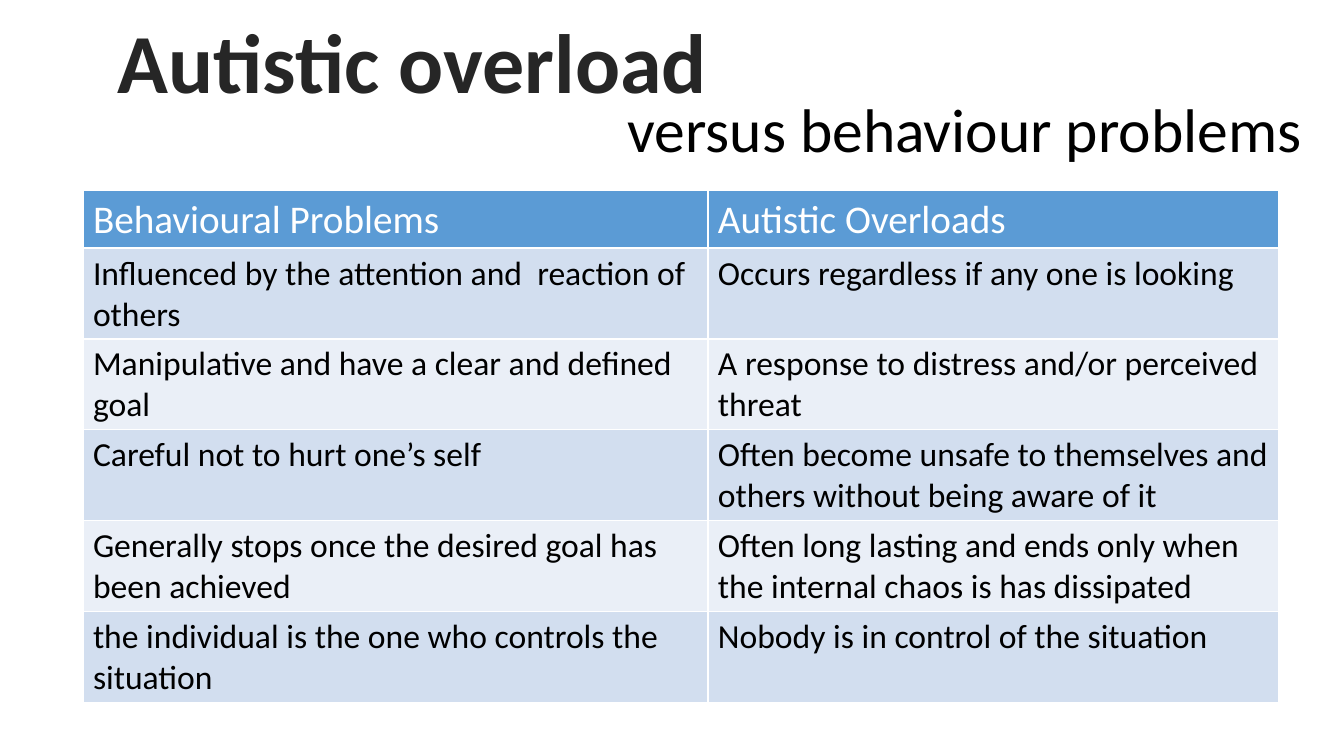
from dataclasses import dataclass

from lxml.etree import SubElement
from pptx import Presentation
from pptx.dml.color import RGBColor
from pptx.enum.text import MSO_ANCHOR as Anchor, MSO_AUTO_SIZE as AutoSize, PP_ALIGN as Align
from pptx.oxml.ns import qn
from pptx.util import Cm, Pt

TITLE_ONLY = 5
HEADER_FILL = "5B9BD5"
BAND_FILLS = ("D2DEEF", "EAEFF7")
COLUMN_WIDTHS = (15.75, 14.37)
HEADER_HEIGHT = 1.43
ROW_HEIGHT = 2.29


@dataclass
class TextStyle:
    size: int
    colour: str
    bold: bool = False


@dataclass
class Heading:
    text: str
    left: float
    top: float
    width: float
    height: float
    wrap: bool
    style: TextStyle


TITLE = Heading("Autistic overload", 1.35, 0.1, 18.08, 2.82, True,
                TextStyle(60, "262626", True))
SUBTITLE = Heading("versus behaviour problems", 15.47, 2.16, 17.7, 2.13, False,
                   TextStyle(44, "000000"))
HEADER_STYLE = TextStyle(28, "FFFFFF")
BODY_STYLE = TextStyle(24, "000000")

COMPARISON = (
    ("Behavioural Problems", "Autistic Overloads"),
    ("Influenced by the attention and  reaction of others",
     "Occurs regardless if any one is looking"),
    ("Manipulative and have a clear and defined goal",
     "A response to distress and/or perceived threat"),
    ("Careful not to hurt one’s self",
     "Often become unsafe to themselves and others without being aware of it"),
    ("Generally stops once the desired goal has been achieved",
     "Often long lasting and ends only when the internal chaos is has dissipated"),
    ("the individual is the one who controls the situation",
     "Nobody is in control of the situation"),
)


def rgb(colour: str) -> RGBColor:
    return RGBColor.from_string(colour)


def set_attributes(target, values: dict) -> None:
    for name, value in values.items():
        setattr(target, name, value)


def write_text(paragraph, text: str, style: TextStyle):
    run = paragraph.add_run()
    run.text = text
    set_attributes(run.font, {"name": "Calibri", "size": Pt(style.size), "bold": style.bold})
    run.font.color.rgb = rgb(style.colour)
    return run


def format_heading(shape, heading: Heading):
    set_attributes(shape, {"left": Cm(heading.left), "top": Cm(heading.top),
                           "width": Cm(heading.width), "height": Cm(heading.height)})
    frame = shape.text_frame
    set_attributes(frame, {"word_wrap": heading.wrap, "auto_size": AutoSize.SHAPE_TO_FIT_TEXT,
                           "vertical_anchor": Anchor.TOP})
    paragraph = frame.paragraphs[0]
    paragraph.alignment = Align.CENTER
    return write_text(paragraph, heading.text, heading.style)


def outline_text(run, colour: str, width: float) -> None:
    line = SubElement(run.font._element, qn("a:ln"), w=str(int(Pt(width))))
    fill = SubElement(line, qn("a:solidFill"))
    SubElement(fill, qn("a:srgbClr"), val=colour)
    run.font._element.insert(0, line)


def add_comparison(slide) -> None:
    heights = [HEADER_HEIGHT] + [ROW_HEIGHT] * (len(COMPARISON) - 1)
    table = slide.shapes.add_table(len(COMPARISON), len(COLUMN_WIDTHS), Cm(2.09), Cm(4.81),
                                   Cm(sum(COLUMN_WIDTHS)), Cm(sum(heights))).table
    for column, width in zip(table.columns, COLUMN_WIDTHS):
        column.width = Cm(width)
    for index, (row, height, texts) in enumerate(zip(table.rows, heights, COMPARISON)):
        row.height = Cm(height)
        fill = BAND_FILLS[(index - 1) % 2] if index else HEADER_FILL
        style = BODY_STYLE if index else HEADER_STYLE
        for cell, text in zip(row.cells, texts):
            cell.fill.solid()
            cell.fill.fore_color.rgb = rgb(fill)
            write_text(cell.text_frame.paragraphs[0], text, style)


def main() -> None:
    presentation = Presentation()
    set_attributes(presentation, {"slide_width": Cm(33.87), "slide_height": Cm(19.05)})
    slide = presentation.slides.add_slide(presentation.slide_layouts[TITLE_ONLY])
    title_run = format_heading(slide.shapes.title, TITLE)
    outline_text(title_run, "FFFFFF", 1.06)
    format_heading(slide.shapes.add_textbox(0, 0, 0, 0), SUBTITLE)
    add_comparison(slide)
    presentation.save("out.pptx")


if __name__ == "__main__":
    main()
